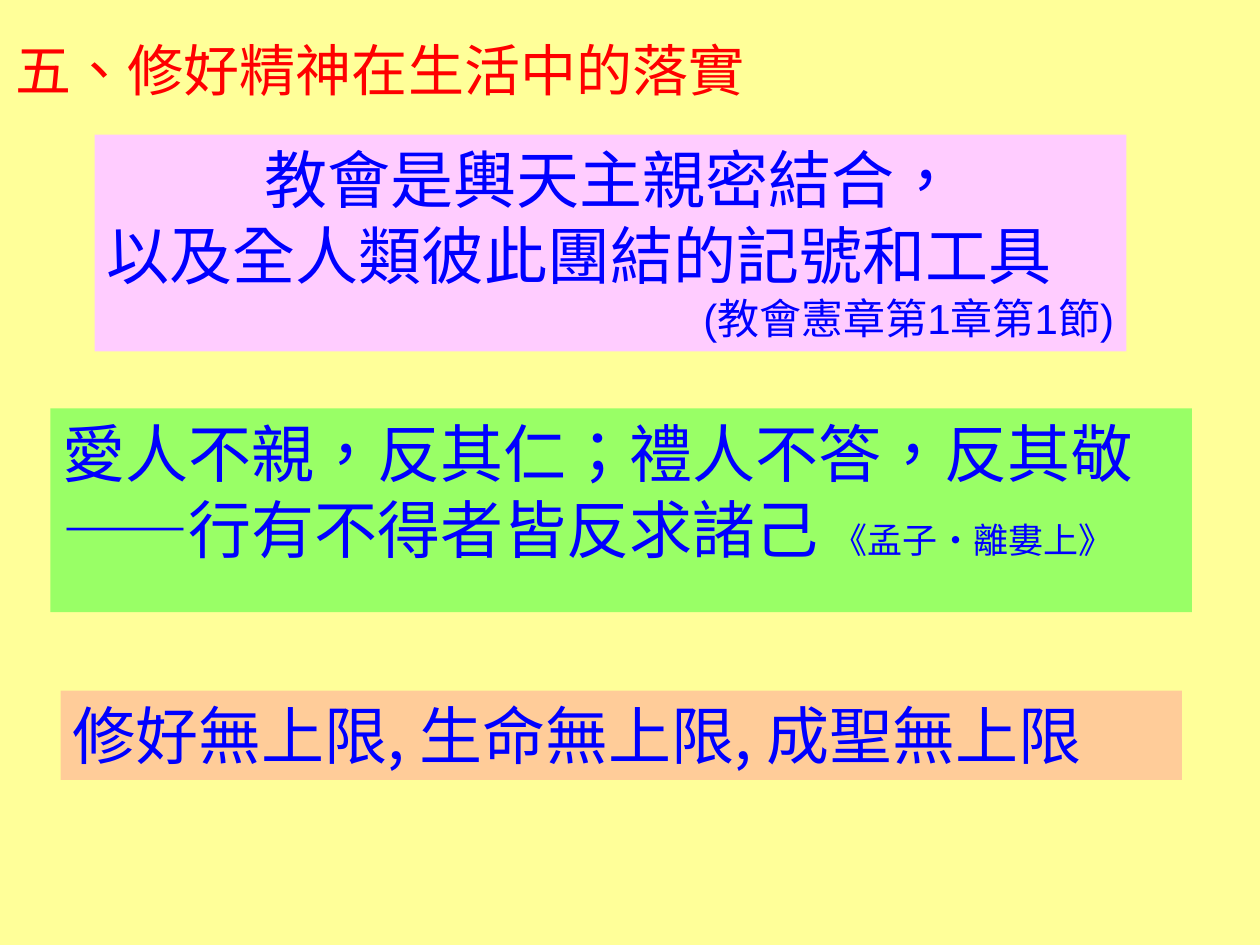
from dataclasses import dataclass
from typing import Optional

from lxml import etree
from pptx import Presentation
from pptx.dml.color import RGBColor
from pptx.enum.lang import MSO_LANGUAGE_ID
from pptx.enum.shapes import MSO_SHAPE
from pptx.enum.text import MSO_ANCHOR, PP_ALIGN
from pptx.oxml.ns import qn
from pptx.util import Pt

RECT = MSO_SHAPE.RECTANGLE
TOP = MSO_ANCHOR.TOP
LEFT, MID, RIGHT = PP_ALIGN.LEFT, PP_ALIGN.CENTER, PP_ALIGN.RIGHT
CHINESE = MSO_LANGUAGE_ID.TRADITIONAL_CHINESE
HAN, LATIN = "Noto Sans CJK SC", "Arial"
BLUE, RED = "0000FF", "FF0000"
WIDE, HIGH = 720, 540


@dataclass
class Run:
    text: str
    size: float = 36
    font: str = HAN
    color: str = BLUE


@dataclass
class Line:
    runs: list[Run]
    align: PP_ALIGN = LEFT
    space: Optional[float] = None


@dataclass
class Panel:
    left: float
    top: float
    width: float
    height: float
    fill: str
    lines: list[Line]


PANELS = [
    Panel(28.8, 233.3, 652.3, 116.6, "99FF66", [
        Line([Run("愛人不親，反其仁；禮人不答，反其敬——行有不得者皆反求諸己 "),
              Run("《孟子·離婁上》", size=20)]),
    ]),
    Panel(54, 77, 589.7, 123.8, "FFCCFF", [
        Line([Run("教會是輿天主親密結合，")], align=MID),
        Line([Run("以及全人類彼此團結的記號和工具")]),
        Line([Run("(教會憲章第1章第1節)", size=24, font=LATIN)], align=RIGHT),
    ]),
    Panel(34.6, 394.6, 640.8, 51.1, "FFCC99", [
        Line([Run("修好無上限, 生命無上限, 成聖無上限")]),
    ]),
]


def paint(fill, color: str) -> None:
    fill.solid()
    fill.fore_color.rgb = RGBColor.from_string(color)


def add_run(para, text: str, *, size: float, font: str, color: str) -> None:
    run = para.add_run()
    run.text = text
    run.font.size = Pt(size)
    run.font.language_id = CHINESE
    paint(run.font.fill, color)
    run.font.name = font
    etree.SubElement(run.font._element, qn("a:ea"), typeface=HAN)


def write(frame, lines: list[Line]) -> None:
    frame.word_wrap = True
    frame.vertical_anchor = TOP
    for i, line in enumerate(lines):
        para = frame.add_paragraph() if i else frame.paragraphs[0]
        para.alignment = line.align
        if line.space:
            para.line_spacing = Pt(line.space)
        for run in line.runs:
            add_run(para, run.text, size=run.size, font=run.font, color=run.color)


def draw(slide, panel: Panel) -> None:
    box = slide.shapes.add_shape(RECT, Pt(panel.left), Pt(panel.top),
                                 Pt(panel.width), Pt(panel.height))
    box.shadow.inherit = False
    paint(box.fill, panel.fill)
    box.line.fill.background()
    write(box.text_frame, panel.lines)


def main() -> None:
    deck = Presentation()
    deck.slide_width, deck.slide_height = Pt(WIDE), Pt(HIGH)
    slide = deck.slides.add_slide(deck.slide_layouts[6])
    paint(slide.background.fill, "FFFF99")
    title = slide.shapes.add_textbox(Pt(2), Pt(0), Pt(WIDE), Pt(HIGH))
    write(title.text_frame, [
        Line([Run("五、修好精神在生活中的落實", size=32, color=RED)], space=55),
    ])
    for panel in PANELS:
        draw(slide, panel)
    deck.save("out.pptx")


if __name__ == "__main__":
    main()
